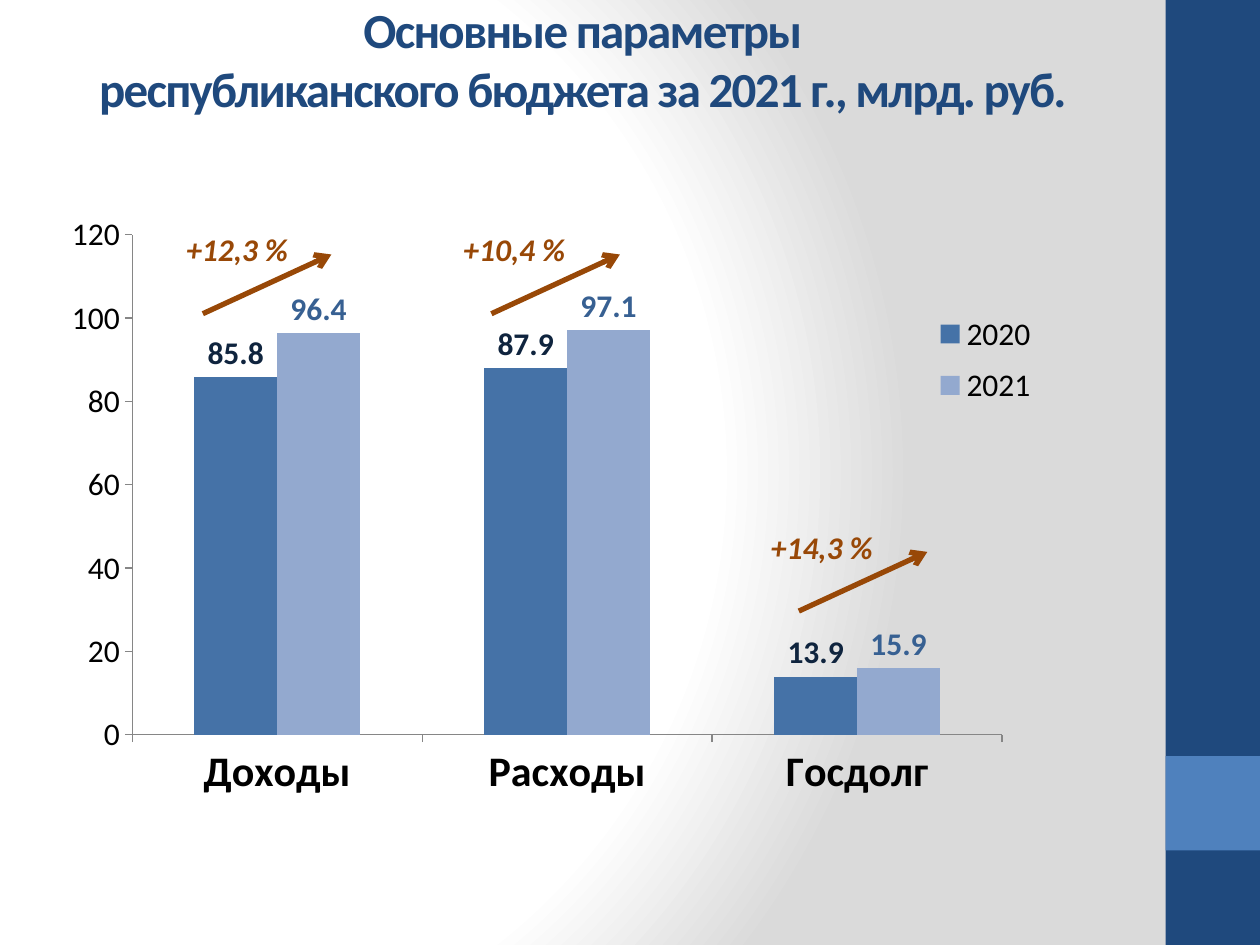
from dataclasses import dataclass

from lxml import etree
from pptx import Presentation
from pptx.chart.data import CategoryChartData
from pptx.dml.color import RGBColor
from pptx.enum.chart import (XL_CHART_TYPE, XL_LABEL_POSITION,
                             XL_LEGEND_POSITION, XL_TICK_MARK)
from pptx.enum.shapes import MSO_CONNECTOR, MSO_SHAPE
from pptx.enum.text import MSO_ANCHOR, PP_ALIGN
from pptx.oxml import parse_xml
from pptx.oxml.ns import nsdecls, qn
from pptx.util import Inches, Pt

COLUMNS = XL_CHART_TYPE.COLUMN_CLUSTERED
OUTSIDE = XL_TICK_MARK.OUTSIDE
ABOVE = XL_LABEL_POSITION.OUTSIDE_END
RIGHT = XL_LEGEND_POSITION.RIGHT
STRAIGHT = MSO_CONNECTOR.STRAIGHT
RECT = MSO_SHAPE.RECTANGLE
MIDDLE = MSO_ANCHOR.MIDDLE
CENTER = PP_ALIGN.CENTER


@dataclass(frozen=True)
class Theme:
    font: str = "Calibri"
    navy: str = "1F497D"
    blue: str = "4F81BD"
    brown: str = "984807"
    black: str = "000000"
    axis: str = "868686"
    white: str = "FFFFFF"
    grey: str = "DADADA"
    title: int = 28
    head: int = 24
    body: int = 18


@dataclass(frozen=True)
class Series:
    name: str
    values: tuple[float, ...]
    fill: str
    label: str


@dataclass(frozen=True)
class Growth:
    """Growth note: its text, text left edge, and arrow start."""
    text: str
    left: float
    x: float
    y: float


THEME = Theme()
GROUPS = ("Доходы", "Расходы", "Госдолг")
SERIES = (
    Series("2020", (85.8, 87.9, 13.9), "4572A7", "0F243E"),
    Series("2021", (96.4, 97.1, 15.9), "93A9CF", "376092"),
)
GROWTH = (
    Growth("+12,3 %", 1.38, 1.61, 2.49),
    Growth("+10,4 %", 3.58, 3.9, 2.49),
    Growth("+14,3 %", 6.02, 6.34, 4.85),
)
TITLE = ("Основные параметры", "республиканского бюджета за 2021 г., млрд. руб.")


def rgb(code: str) -> RGBColor:
    return RGBColor.from_string(code)


def style(font, size: int, color: str, bold=False, italic=False) -> None:
    font.name = THEME.font
    font.size = Pt(size)
    font.color.rgb = rgb(color)
    font.bold = bold
    font.italic = italic


def paint_back(slide) -> None:
    """Fill the slide with a round gradient centred left of the middle."""
    stops = ((0, THEME.white), (75, THEME.white), (100, THEME.grey))
    marks = "".join(f'<a:gs pos="{pos * 1000}"><a:srgbClr val="{color}"/></a:gs>'
                    for pos, color in stops)
    back = parse_xml(
        f'<p:bg {nsdecls("p", "a")}><p:bgPr><a:gradFill rotWithShape="1">'
        f'<a:gsLst>{marks}</a:gsLst><a:path path="circle">'
        '<a:fillToRect l="20000" t="50000" r="100000" b="50000"/></a:path>'
        '</a:gradFill><a:effectLst/></p:bgPr></p:bg>')
    slide.element.find(qn("p:cSld")).insert(0, back)


def add_block(slide, top: float, height: float, color: str) -> None:
    block = slide.shapes.add_shape(RECT, Inches(9.25), Inches(top),
                                   Inches(0.75), Inches(height))
    block.shadow.inherit = False
    block.fill.solid()
    block.fill.fore_color.rgb = rgb(color)
    block.line.fill.background()


def add_title(slide) -> None:
    box = slide.shapes.add_textbox(0, 0, Inches(9.25), Inches(0.92))
    frame = box.text_frame
    frame.word_wrap = True
    frame.vertical_anchor = MIDDLE
    line = frame.paragraphs[0]
    line.alignment = CENTER
    style(line.font, THEME.title, THEME.navy, bold=True)
    for index, text in enumerate(TITLE):
        if index:
            line.add_line_break()
        run = line.add_run()
        run.text = text
        run.font.size = Pt(THEME.title)
        run.font.element.set("spc", "-100") if hasattr(run.font, "element") \
            else run._r.get_or_add_rPr().set("spc", "-100")


def place(node, x: float, y: float, w: float, h: float, inner=False) -> None:
    """Give a plot area or legend a fixed place, in shares of the chart."""
    for old in node.findall(qn("c:layout")):
        node.remove(old)
    layout = etree.Element(qn("c:layout"))
    manual = etree.SubElement(layout, qn("c:manualLayout"))
    parts = [("layoutTarget", "inner")] if inner else []
    parts += [("xMode", "edge"), ("yMode", "edge"),
              ("x", x), ("y", y), ("w", w), ("h", h)]
    for tag, value in parts:
        etree.SubElement(manual, qn(f"c:{tag}")).set("val", str(value))
    spot = node.find(qn("c:legendPos"))
    node.insert(0 if spot is None else node.index(spot) + 1, layout)


def add_columns(slide) -> None:
    data = CategoryChartData()
    data.categories = GROUPS
    for item in SERIES:
        data.add_series(item.name, item.values)
    chart = slide.shapes.add_chart(COLUMNS, Inches(0.35), Inches(1.62),
                                   Inches(8.74), Inches(4.84), data).chart
    style(chart.font, THEME.body, THEME.black)
    chart.has_title = False
    chart.has_legend = True
    chart.legend.position = RIGHT
    chart.legend.include_in_layout = False
    style(chart.legend.font, THEME.body, THEME.black)
    place(chart.legend._element, 0.8, 0.16, 0.11, 0.19)
    place(chart.plots[0]._element.getparent(), 0.08, 0.05, 0.79, 0.82, inner=True)

    axes = ((chart.category_axis, THEME.head, True),
            (chart.value_axis, THEME.body, False))
    for axis, size, bold in axes:
        axis.has_major_gridlines = False
        axis.major_tick_mark = OUTSIDE
        axis.format.line.color.rgb = rgb(THEME.axis)
        style(axis.tick_labels.font, size, THEME.black, bold)
    chart.value_axis.minimum_scale = 0
    chart.value_axis.maximum_scale = 120
    chart.value_axis.major_unit = 20

    plot = chart.plots[0]
    plot.gap_width = 150
    plot.overlap = 0
    plot.vary_by_categories = False
    for series, item in zip(plot.series, SERIES):
        series.format.fill.solid()
        series.format.fill.fore_color.rgb = rgb(item.fill)
        labels = series.data_labels
        labels.show_value = True
        labels.position = ABOVE
        style(labels.font, THEME.body, item.label, bold=True)


def add_growth(slide, note: Growth) -> None:
    arrow = slide.shapes.add_connector(
        STRAIGHT, Inches(note.x), Inches(note.y),
        Inches(note.x + 1.02), Inches(note.y - 0.47))
    arrow.line.color.rgb = rgb(THEME.brown)
    arrow.line.width = Pt(3)
    etree.SubElement(arrow.line._get_or_add_ln(), qn("a:tailEnd")).set("type", "arrow")
    etree.SubElement(arrow.element.find(qn("p:spPr")), qn("a:effectLst"))

    box = slide.shapes.add_textbox(Inches(note.left), Inches(note.y - 0.71),
                                   Inches(1.02), Inches(0.4))
    box.text_frame.word_wrap = False
    line = box.text_frame.paragraphs[0]
    line.text = note.text
    style(line.font, THEME.body, THEME.brown, bold=True, italic=True)


def main() -> None:
    deck = Presentation()
    deck.slide_width, deck.slide_height = Inches(10), Inches(7.5)
    slide = deck.slides.add_slide(deck.slide_layouts[6])
    paint_back(slide)
    add_block(slide, 0, 7.5, THEME.navy)
    add_block(slide, 6, 0.75, THEME.blue)
    add_title(slide)
    add_columns(slide)
    for note in GROWTH:
        add_growth(slide, note)
    deck.save("out.pptx")


if __name__ == "__main__":
    main()
